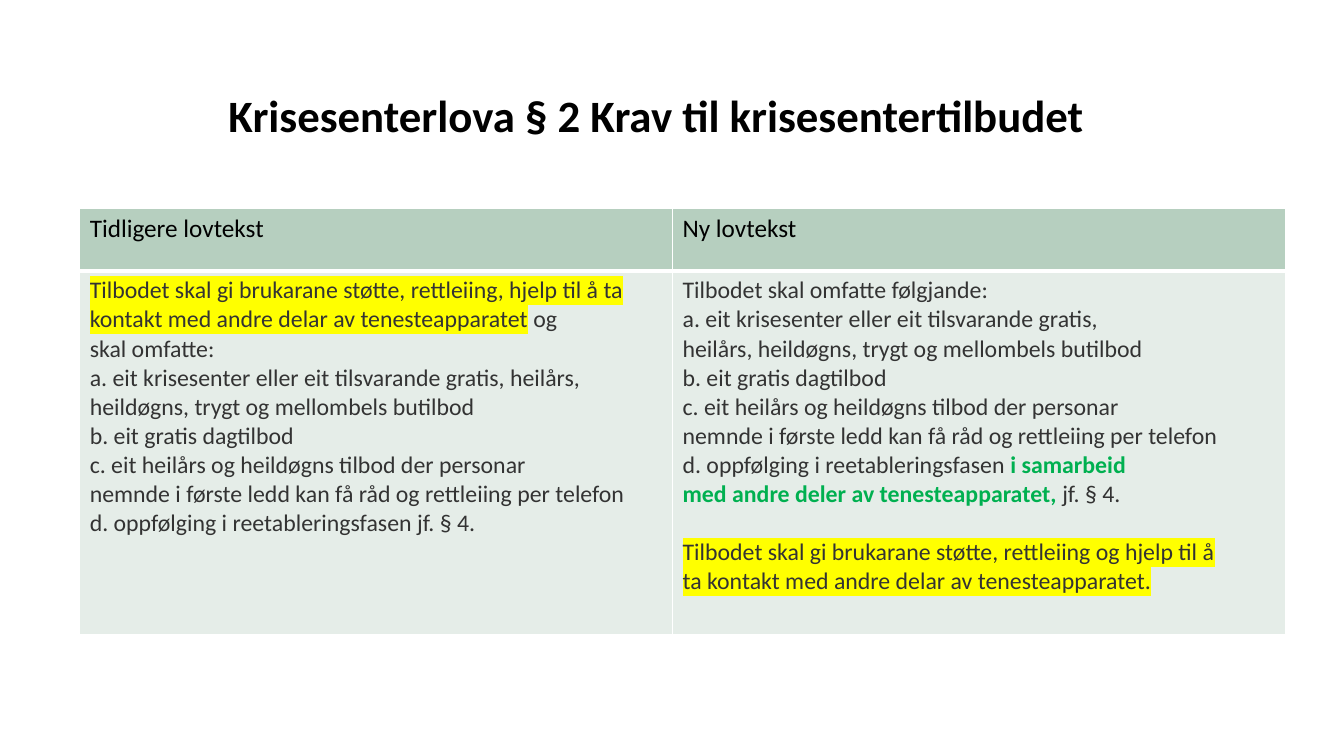
"""Build a slide comparing the former and new wording of a law section."""
from lxml.etree import SubElement
from pptx import Presentation
from pptx.dml.color import RGBColor
from pptx.enum.text import MSO_ANCHOR, MSO_AUTO_SIZE, PP_ALIGN
from pptx.oxml import parse_xml
from pptx.oxml.ns import nsdecls, qn
from pptx.util import Inches, Pt

FONT = "Calibri"
BLACK = RGBColor(0x00, 0x00, 0x00)
GREY = RGBColor(0x33, 0x33, 0x33)
GREEN = RGBColor(0x00, 0xB0, 0x50)
YELLOW = RGBColor(0xFF, 0xFF, 0x00)
WHITE = RGBColor(0xFF, 0xFF, 0xFF)
HEADER_FILL = RGBColor(0xB6, 0xCF, 0xBF)
BODY_FILL = RGBColor(0xE5, 0xED, 0xE8)

PLAIN, MARKED, ADDED = "plain", "marked", "added"
NO_BREAK = chr(160)
BODY_SIZE = 17
BLANK_LINE = Pt(20.75)

DAYTIME = [("b. eit gratis dagtilbod", PLAIN)]
PHONE = [("c. eit heilårs og heildøgns tilbod der personar|nemnde i første ledd "
          "kan få råd og rettleiing|per telefon", PLAIN)]
OLD_TEXT = [
    [("Tilbodet skal gi brukarane støtte, rettleiing, hjelp til å|ta|kontakt "
      "med andre delar av tenesteapparatet", MARKED), (" og ", PLAIN)],
    [("skal|omfatte:", PLAIN)],
    [("a. eit krisesenter eller eit tilsvarande gratis,|heilårs, ", PLAIN)],
    [("heildøgns, trygt og mellombels butilbod", PLAIN)],
    DAYTIME,
    PHONE,
    [("d. oppfølging i reetableringsfasen jf.|§ 4.", PLAIN)],
]
NEW_TEXT = [
    [("Tilbodet skal omfatte følgjande:", PLAIN)],
    [("a. eit krisesenter eller eit tilsvarande gratis,|heilårs, heildøgns, "
      "trygt og|mellombels butilbod", PLAIN)],
    DAYTIME,
    PHONE,
    [("d. oppfølging i reetableringsfasen ", PLAIN),
     ("i samarbeid|med andre deler av tenesteapparatet,", ADDED),
     (" jf.|§ 4.", PLAIN)],
    [("Tilbodet skal gi brukarane støtte, rettleiing og|hjelp til å|ta kontakt "
      "med andre delar av|tenesteapparatet.", MARKED)],
]


def keep_together(text):
    """Make spaces non-breaking and turn each bar into a breaking space."""
    return text.replace(" ", NO_BREAK).replace("|", " ")


def style_run(r, size, color, bold=False):
    """Set font, size, colour and weight of a run."""
    r.font.name = FONT
    r.font.size = Pt(size)
    r.font.bold = bold
    r.font.color.rgb = color


def highlight(r, color):
    """Put a marker colour behind a run."""
    mark = parse_xml(f'<a:highlight {nsdecls("a")}><a:srgbClr val="{color}"/></a:highlight>')
    r.font._element.find(qn("a:solidFill")).addnext(mark)


def style_cell(cell, fill, bottom):
    """Draw white borders and fill a cell."""
    tc_pr = cell._tc.get_or_add_tcPr()
    for side, width in (("L", 1), ("R", 1), ("T", 1), ("B", bottom)):
        ln = SubElement(tc_pr, qn(f"a:ln{side}"), w=str(Pt(width)))
        solid = SubElement(ln, qn("a:solidFill"))
        SubElement(solid, qn("a:srgbClr"), val=str(WHITE))
    cell.fill.solid()
    cell.fill.fore_color.rgb = fill


def fill_header(cell, text):
    """Write a column heading."""
    style_cell(cell, HEADER_FILL, 3)
    cell.text_frame.text = text
    style_run(cell.text_frame.paragraphs[0].runs[0], 18, BLACK)


def fill_body(cell, paragraphs):
    """Write law text made of paragraphs of (text, kind) runs."""
    style_cell(cell, BODY_FILL, 1)
    tf = cell.text_frame
    for i, parts in enumerate(paragraphs):
        p = tf.add_paragraph() if i else tf.paragraphs[0]
        for text, kind in parts:
            r = p.add_run()
            r.text = keep_together(text)
            style_run(r, BODY_SIZE, GREEN if kind == ADDED else GREY, kind == ADDED)
            if kind == MARKED:
                highlight(r, YELLOW)


def set_title(slide, text):
    """Place and format the title placeholder."""
    sp = slide.shapes.title
    sp.left, sp.top = Inches(0.79), Inches(0.26)
    sp.width, sp.height = Inches(11.44), Inches(1.15)
    tf = sp.text_frame
    tf.text = text
    tf.word_wrap = True
    tf.auto_size = MSO_AUTO_SIZE.NONE
    tf.vertical_anchor = MSO_ANCHOR.BOTTOM
    tf.margin_left = tf.margin_right = tf.margin_top = tf.margin_bottom = 0
    p = tf.paragraphs[0]
    p.alignment = PP_ALIGN.CENTER
    p.line_spacing = 0.9
    style_run(p.runs[0], 32, BLACK, True)


def add_comparison(slide):
    """Add the table with former and new law text."""
    table = slide.shapes.add_table(
        2, 2, Inches(0.79), Inches(2.07), Inches(11.96), Inches(4.23)).table
    for column, width in zip(table.columns, (5.88, 6.08)):
        column.width = Inches(width)
    for row, height in zip(table.rows, (0.62, 3.61)):
        row.height = Inches(height)
    columns = (("Tidligere lovtekst", OLD_TEXT), ("Ny lovtekst", NEW_TEXT))
    for i, (heading, paragraphs) in enumerate(columns):
        fill_header(table.cell(0, i), heading)
        fill_body(table.cell(1, i), paragraphs)
    table.cell(1, 1).text_frame.paragraphs[-1].space_before = BLANK_LINE


def main():
    """Create and save the presentation."""
    prs = Presentation()
    prs.slide_width, prs.slide_height = Inches(13.33), Inches(7.5)
    slide = prs.slides.add_slide(prs.slide_layouts[5])
    set_title(slide, "Krisesenterlova § 2 Krav til krisesentertilbudet")
    add_comparison(slide)
    prs.save("out.pptx")


if __name__ == "__main__":
    main()
